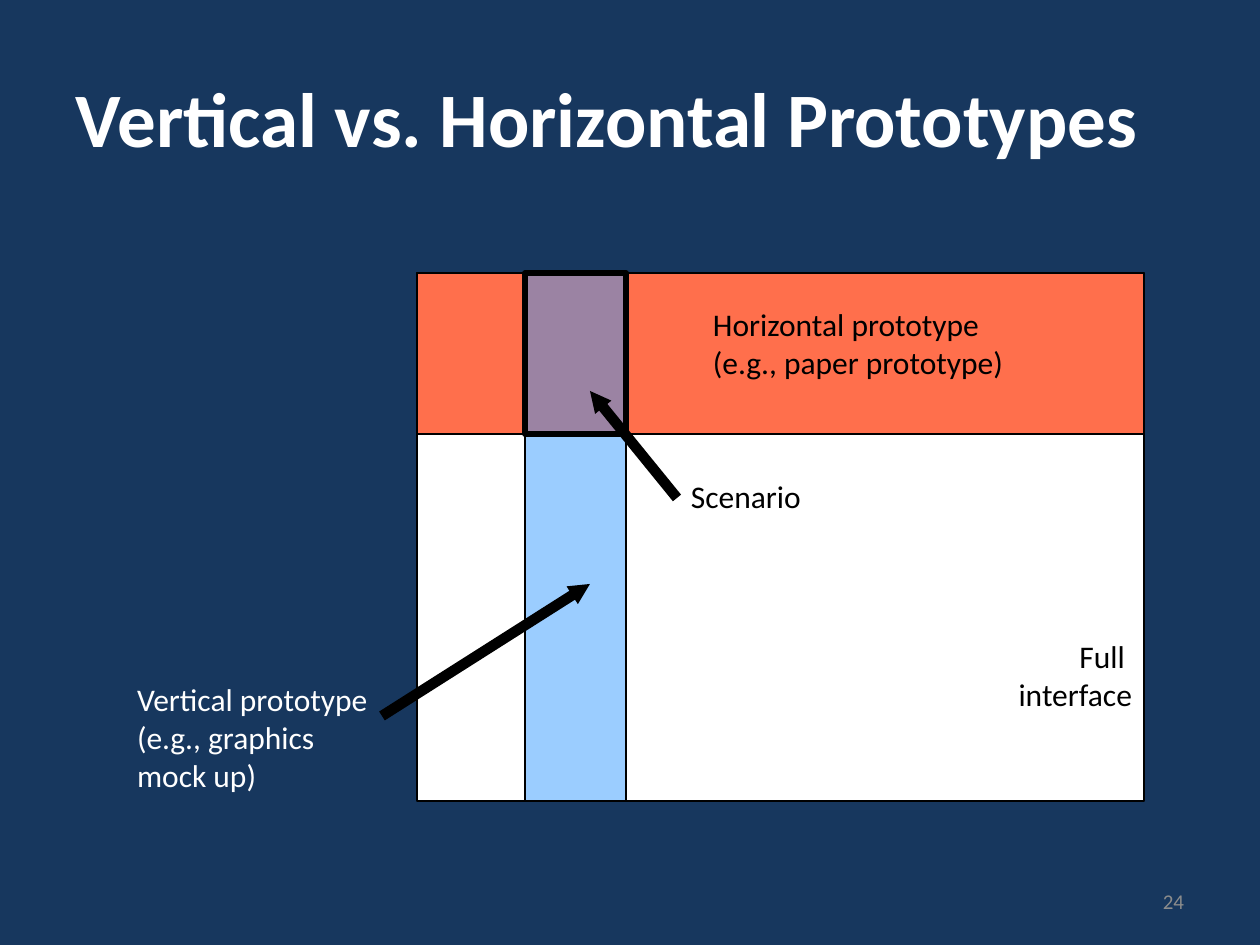
import pptx
import pptx.util
import pptx.dml.color
import pptx.enum.shapes
import pptx.enum.text
import pptx.oxml.ns
from lxml import etree

PX = 914400 // 126
FONT = "Calibri"
HUES = {"navy": "17375E", "white": "FFFFFF", "black": "000000",
        "grey": "8C8C8C", "orange": "FF3300", "blue": "3399FF"}

LEFT, TOP, WIDE, HIGH = 417, 273, 727, 528
BAND = 161
COL, SPAN = 525, 101

RECTS = [
    ((LEFT, TOP, WIDE, HIGH), "white", 100, 1),
    ((LEFT, TOP, WIDE, BAND), "orange", 70, 1),
    ((COL, TOP, SPAN, HIGH), "blue", 49, 1),
    ((COL, TOP, SPAN, BAND), None, 100, 3),
]
ARROWS = [
    ((677, 498), (590, 391)),
    ((382, 716), (590, 584)),
]
LABELS = [
    ("Vertical prototype\n(e.g., graphics\nmock up)", (137, 680, 236, 115), {"hue": "white"}),
    ("Scenario", (691, 477, 180, 82), {}),
    ("Horizontal prototype\n(e.g., paper prototype)", (713, 305, 315, 77), {}),
    ("Full \vinterface", (957, 637, 175, 164), {"align": "RIGHT"}),
    ("Vertical vs. Horizontal Prototypes", (63, 38, 1134, 157),
     {"size": 44, "hue": "white", "bold": True, "pad": 13, "anchor": "MIDDLE"}),
    ("24", (903, 876, 294, 50),
     {"size": 12, "hue": "grey", "align": "RIGHT", "pad": 13, "anchor": "MIDDLE"}),
]


def emu(nums):
    return [pptx.util.Emu(n * PX) for n in nums]


def rgb(hue):
    return pptx.dml.color.RGBColor.from_string(HUES[hue])


def add_sub(node, tag, **attrs):
    return etree.SubElement(node, pptx.oxml.ns.qn(tag), **attrs)


def add_text(slide, text, box, size=18, hue="black", bold=False,
             align="LEFT", pad=0, anchor="TOP"):
    frame = slide.shapes.add_textbox(*emu(box)).text_frame
    frame.word_wrap = True
    frame.vertical_anchor = getattr(pptx.enum.text.MSO_ANCHOR, anchor)
    frame.margin_left = frame.margin_right = pad * PX
    frame.margin_top = frame.margin_bottom = 0
    frame.text = text
    for para in frame.paragraphs:
        para.alignment = getattr(pptx.enum.text.PP_ALIGN, align)
        for run in para.runs:
            run.font.name = FONT
            run.font.size = pptx.util.Pt(size)
            run.font.bold = bold
            run.font.color.rgb = rgb(hue)


def set_line(line, width):
    line.color.rgb = rgb("black")
    line.width = pptx.util.Pt(width)


def add_rect(slide, box, hue, alpha, width):
    kind = pptx.enum.shapes.MSO_SHAPE.RECTANGLE
    rect = slide.shapes.add_shape(kind, *emu(box))
    rect.shadow.inherit = False
    set_line(rect.line, width)
    if hue is None:
        rect.fill.background()
        return
    rect.fill.solid()
    rect.fill.fore_color.rgb = rgb(hue)
    if alpha < 100:
        tone = rect.fill._xPr.find(".//" + pptx.oxml.ns.qn("a:srgbClr"))
        add_sub(tone, "a:alpha", val=str(alpha * 1000))


def add_arrow(slide, start, end):
    kind = pptx.enum.shapes.MSO_CONNECTOR.STRAIGHT
    arrow = slide.shapes.add_connector(kind, *emu(start + end))
    set_line(arrow.line, 6)
    add_sub(arrow.line._get_or_add_ln(), "a:tailEnd", type="triangle", w="sm", len="sm")
    add_sub(arrow._element.spPr, "a:effectLst")


def main():
    deck = pptx.Presentation()
    deck.slide_width, deck.slide_height = emu((1260, 945))
    slide = deck.slides.add_slide(deck.slide_layouts[6])
    slide.background.fill.solid()
    slide.background.fill.fore_color.rgb = rgb("navy")
    for rect in RECTS:
        add_rect(slide, *rect)
    for start, end in ARROWS:
        add_arrow(slide, start, end)
    for text, box, style in LABELS:
        add_text(slide, text, box, **style)
    deck.save("out.pptx")


if __name__ == "__main__":
    main()
